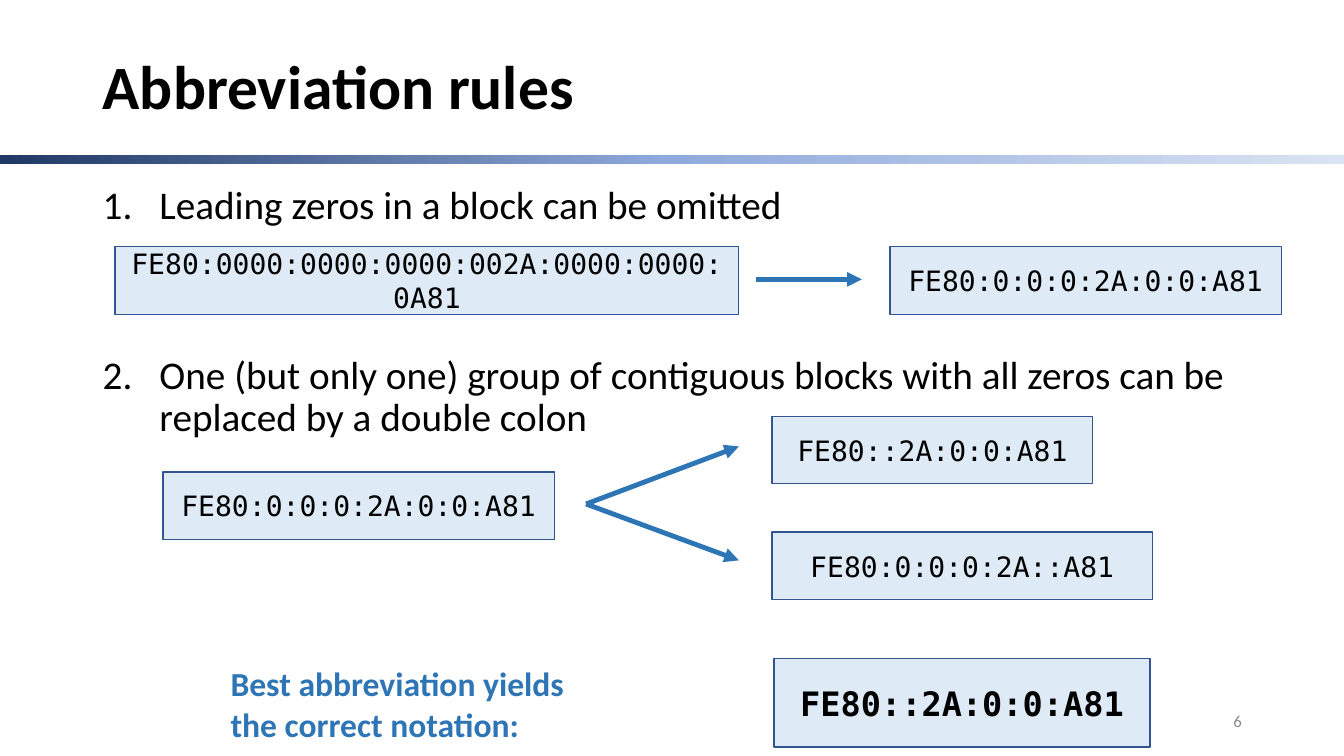
import copy
import pptx
import pptx.dml.color
import pptx.enum.shapes
import pptx.enum.text
import pptx.oxml
import pptx.oxml.ns
import pptx.util
from pptx.util import Cm

COLORS = {
    "text": "000000",
    "accent": "2E75B6",
    "box": "DEEBF7",
    "border": "325491",
    "number": "8C8C8C",
    "bar_start": "203864",
    "bar_middle": "8FAADC",
    "bar_end": "DAE3F3",
}
ALIGN = pptx.enum.text.PP_ALIGN
ANCHOR = pptx.enum.text.MSO_ANCHOR
RECTANGLE = pptx.enum.shapes.MSO_SHAPE.RECTANGLE
STRAIGHT = pptx.enum.shapes.MSO_CONNECTOR.STRAIGHT


def rgb(name):
    return pptx.dml.color.RGBColor.from_string(COLORS[name])


def write(shape, texts, font, color="text", anchor=ANCHOR.MIDDLE, **paragraph_format):
    frame = shape.text_frame
    frame.word_wrap = True
    frame.vertical_anchor = anchor
    for index, text in enumerate(texts):
        paragraph = frame.add_paragraph() if index else frame.paragraphs[0]
        paragraph.text = text
        for name, value in paragraph_format.items():
            setattr(paragraph, name, value)
        for run in paragraph.runs:
            for name, value in font.items():
                setattr(run.font, name, value)
            run.font.color.rgb = rgb(color)
    return frame.paragraphs


presentation = pptx.Presentation()
presentation.slide_width = Cm(33.87)
presentation.slide_height = Cm(19.05)
slide = presentation.slides.add_slide(presentation.slide_layouts[6])
shapes = slide.shapes

bar = shapes.add_shape(RECTANGLE, Cm(0), Cm(3.91), Cm(33.87), Cm(0.23))
bar.shadow.inherit = False
bar.line.fill.background()
bar.fill.gradient()
bar.fill.gradient_angle = 0
stop_list = bar.element.spPr.find(".//" + pptx.oxml.ns.qn("a:gsLst"))
stop_list.insert(1, copy.deepcopy(stop_list[0]))
for stop, position, color in zip(
    bar.fill.gradient_stops, (0, 0.5, 1), ("bar_start", "bar_middle", "bar_end")
):
    stop.position = position
    stop.color.rgb = rgb(color)

title = shapes.add_textbox(Cm(2.34), Cm(1.02), Cm(29.21), Cm(2.46))
title_font = {"name": "Calibri", "size": pptx.util.Pt(44), "bold": True}
write(title, ["Abbreviation rules"], title_font, line_spacing=0.9)

rules = shapes.add_textbox(Cm(2.34), Cm(4.55), Cm(29.21), Cm(13.39))
rule_texts = [
    "Leading zeros in a block can be omitted",
    "One (but only one) group of contiguous blocks with all zeros can be replaced by a double colon",
]
rule_font = {"name": "Calibri", "size": pptx.util.Pt(28)}
rule_paragraphs = write(rules, rule_texts, rule_font, anchor=ANCHOR.TOP, line_spacing=0.9)
rule_paragraphs[1].space_before = pptx.util.Pt(91)
for number, paragraph in enumerate(rule_paragraphs, 1):
    properties = paragraph._p.get_or_add_pPr()
    properties.set("marL", str(Cm(1.43)))
    properties.set("indent", str(-Cm(1.43)))
    properties.append(pptx.oxml.parse_xml(
        f'<a:buFont {pptx.oxml.ns.nsdecls("a")} typeface="+mj-lt"/>'))
    properties.append(pptx.oxml.parse_xml(
        f'<a:buAutoNum {pptx.oxml.ns.nsdecls("a")} type="arabicPeriod" startAt="{number}"/>'))

address_boxes = [
    ("FE80:0000:0000:0000:002A:0000:0000:0A81", 2.9, 6.22, 15.72, 1.7, 20, False),
    ("FE80:0:0:0:2A:0:0:A81", 22.43, 6.22, 9.86, 1.7, 20, False),
    ("FE80:0:0:0:2A:0:0:A81", 4.11, 11.89, 9.86, 1.7, 20, False),
    ("FE80::2A:0:0:A81", 19.46, 10.49, 8.08, 1.7, 20, False),
    ("FE80:0:0:0:2A::A81", 19.46, 13.41, 9.58, 1.7, 20, False),
    ("FE80::2A:0:0:A81", 19.51, 16.59, 9.47, 2.24, 24, True),
]
for address, left, top, width, height, size, bold in address_boxes:
    box = shapes.add_shape(RECTANGLE, Cm(left), Cm(top), Cm(width), Cm(height))
    box.shadow.inherit = False
    box.fill.solid()
    box.fill.fore_color.rgb = rgb("box")
    box.line.color.rgb = rgb("border")
    box.line.width = pptx.util.Pt(1)
    address_font = {"name": "DejaVu Sans Mono", "size": pptx.util.Pt(size), "bold": bold}
    write(box, [address], address_font, alignment=ALIGN.CENTER)

arrows = [
    (19.05, 7.04, 21.72, 7.04),
    (14.77, 12.7, 18.62, 11.25),
    (14.77, 12.7, 18.62, 14.12),
]
for ends in arrows:
    arrow = shapes.add_connector(STRAIGHT, *map(Cm, ends))
    arrow.line.color.rgb = rgb("accent")
    arrow.line.width = pptx.util.Pt(3.5)
    arrow.line._get_or_add_ln().append(pptx.oxml.parse_xml(
        f'<a:tailEnd {pptx.oxml.ns.nsdecls("a")} type="triangle"/>'))
    arrow.element.spPr.append(pptx.oxml.parse_xml(
        f'<a:effectLst {pptx.oxml.ns.nsdecls("a")}/>'))

page_number = shapes.add_textbox(Cm(23.93), Cm(17.65), Cm(7.62), Cm(1.02))
number_font = {"name": "Calibri", "size": pptx.util.Pt(12)}
write(page_number, ["6"], number_font, "number", alignment=ALIGN.RIGHT)

conclusion = shapes.add_textbox(Cm(5.56), Cm(16.59), Cm(11.33), Cm(2.31))
conclusion_font = {"name": "Calibri", "size": pptx.util.Pt(24), "bold": True}
write(conclusion, ["Best abbreviation yields\vthe correct notation:"],
      conclusion_font, "accent", ANCHOR.TOP)

presentation.save("out.pptx")
